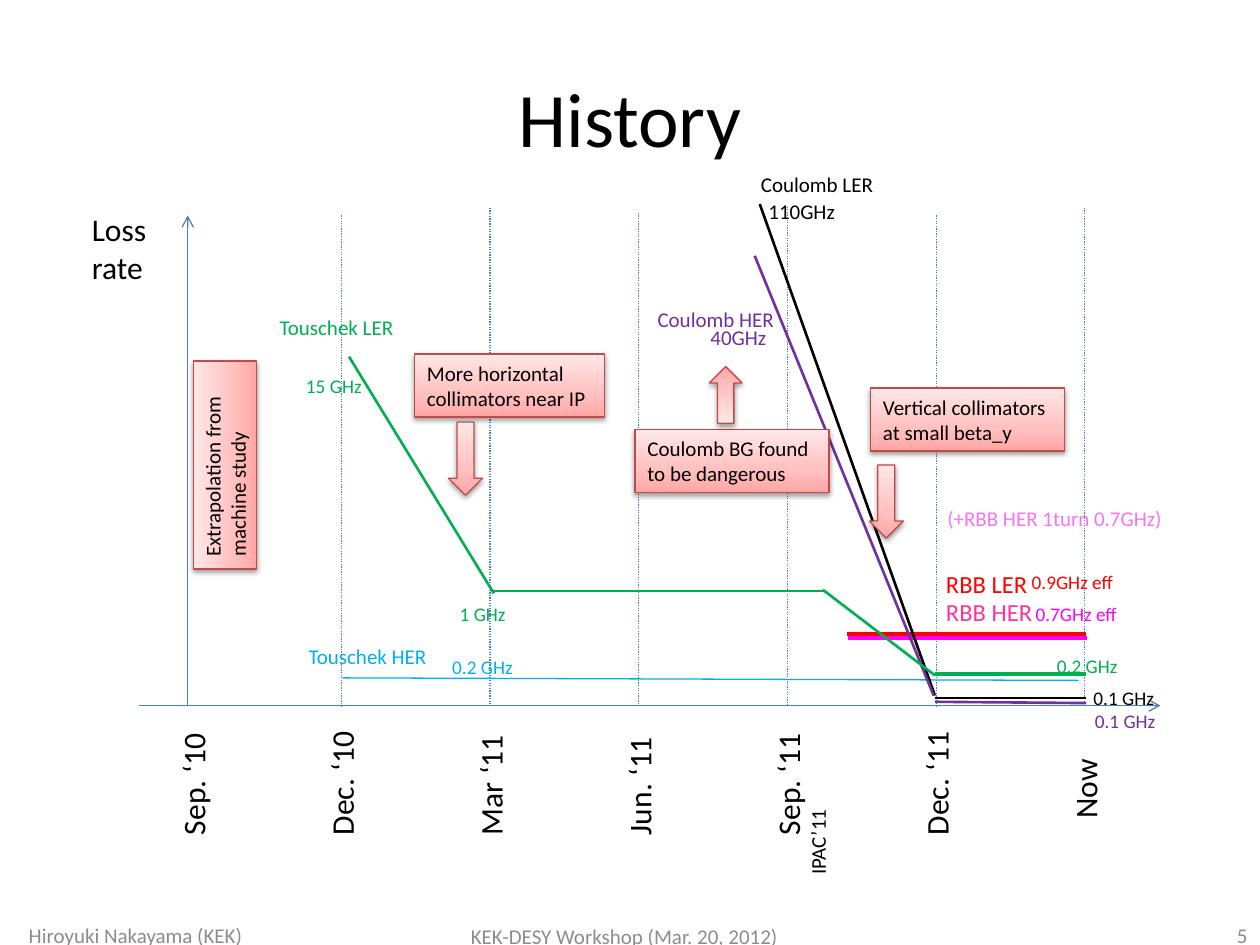
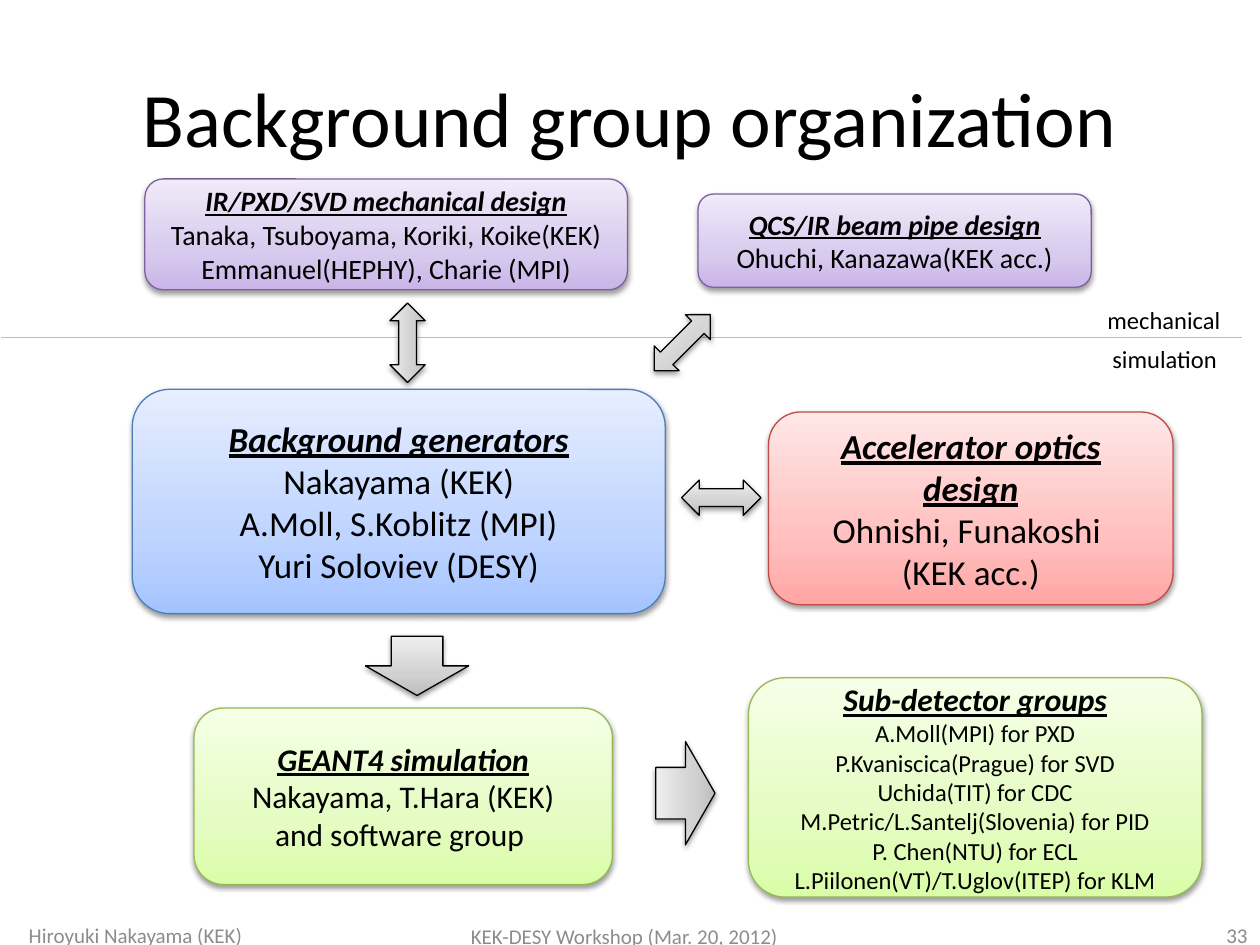
from lxml import etree
from pptx import Presentation
from pptx.dml.color import RGBColor
from pptx.enum.dml import MSO_LINE
from pptx.enum.shapes import MSO_CONNECTOR, MSO_SHAPE
from pptx.enum.text import MSO_ANCHOR, PP_ALIGN
from pptx.oxml import parse_xml
from pptx.oxml.ns import nsdecls, qn
from pptx.util import Inches, Pt

COLUMNS, ROWS = 10, 7.5
CELL = Inches(1)
FONT = "Calibri"
LEFT, CENTER, RIGHT = PP_ALIGN.LEFT, PP_ALIGN.CENTER, PP_ALIGN.RIGHT
TOP, MIDDLE = MSO_ANCHOR.TOP, MSO_ANCHOR.MIDDLE
STRAIGHT = MSO_CONNECTOR.STRAIGHT
DOTTED = MSO_LINE.ROUND_DOT
RECTANGLE, ROUNDED = MSO_SHAPE.RECTANGLE, MSO_SHAPE.ROUNDED_RECTANGLE
DOWN, BOTH_WAYS = MSO_SHAPE.DOWN_ARROW, MSO_SHAPE.LEFT_RIGHT_ARROW

BLACK = RGBColor(0x00, 0x00, 0x00)
GRAY = RGBColor(0x8C, 0x8C, 0x8C)
BLUE = RGBColor(0x4B, 0x7E, 0xBC)
GREEN = RGBColor(0x00, 0xB0, 0x50)
SKY = RGBColor(0x00, 0xB0, 0xF0)
MAGENTA = RGBColor(0xFF, 0x00, 0xFF)
RED = RGBColor(0xFF, 0x00, 0x00)
PINK = RGBColor(0xFF, 0x33, 0x99)
ORCHID = RGBColor(0xF7, 0x75, 0xEE)
PURPLE = RGBColor(0x70, 0x30, 0xA0)
GOLD = RGBColor(0xFF, 0xC0, 0x00)
BRICK = RGBColor(0xBF, 0x4C, 0x48)
VIOLET = RGBColor(0x7D, 0x60, 0xA0)
OLIVE = RGBColor(0x98, 0xB9, 0x55)


def shades(*codes):
    return [RGBColor.from_string(code) for code in codes]


ROSE_STYLE = (shades("FFA6A5", "FFC0BF", "FFE7E7"), BRICK)
LILAC_STYLE = (shades("C9B5E8", "D8CBEE", "F0EAF9"), VIOLET)
LIME_STYLE = (shades("DAFDA7", "E4FCC2", "F5FFE7"), OLIVE)
BLUE_STYLE = (shades("A4C4FF", "BFD4FF", "E6EEFF"), BLUE)
SILVER_STYLE = (shades("BDBDBD", "D1D1D1", "EEEEEE"), BLACK)


def cells(*counts):
    return [int(count * CELL) for count in counts]


def add_span(para, text, size, color=BLACK, heading=False):
    span = para.add_run()
    span.text = text
    font = span.font
    font.name, font.size, font.color.rgb = FONT, Pt(size), color
    font.bold = font.italic = font.underline = heading


def add_label(page, place, text, size, color=BLACK, align=LEFT, anchor=TOP, turn=0):
    box = page.shapes.add_textbox(*cells(*place))
    box.rotation = turn
    frame = box.text_frame
    frame.word_wrap = True
    frame.vertical_anchor = anchor
    para = frame.paragraphs[0]
    para.alignment = align
    for number, line in enumerate(text.split("\n")):
        if number:
            para.add_line_break()
        add_span(para, line, size, color)


def add_line(page, start, end, color, width=0.75, dash=None, arrow=False):
    line = page.shapes.add_connector(STRAIGHT, *cells(*start, *end))
    line.line.color.rgb = color
    line.line.width = Pt(width)
    if dash:
        line.line.dash_style = dash
    properties = line._element.spPr
    if arrow:
        etree.SubElement(properties.find(qn("a:ln")), qn("a:tailEnd"), type="arrow")
    etree.SubElement(properties, qn("a:effectLst"))


def add_glossy(page, kind, place, style, turn=0, upside_down=False):
    colors, edge = style
    shape = page.shapes.add_shape(kind, *cells(*place))
    shape.rotation = turn
    shape.line.color.rgb = edge
    shape.line.width = Pt(0.75)
    properties = shape._element.spPr
    if upside_down:
        properties.find(qn("a:xfrm")).set("flipV", "1")
    stops = "".join(
        f'<a:gs pos="{share * 1000}"><a:srgbClr val="{color}"/></a:gs>'
        for share, color in zip((0, 35, 100), colors)
    )
    gradient = parse_xml(
        f'<a:gradFill {nsdecls("a")} rotWithShape="1"><a:gsLst>{stops}</a:gsLst>'
        '<a:lin ang="16200000" scaled="0"/></a:gradFill>'
    )
    properties.find(qn("a:ln")).addprevious(gradient)
    properties.append(parse_xml(
        f'<a:effectLst {nsdecls("a")}><a:outerShdw blurRad="{Pt(3.1)}" dist="{Pt(1.6)}" '
        'dir="5400000" rotWithShape="0"><a:srgbClr val="000000"><a:alpha val="38000"/>'
        '</a:srgbClr></a:outerShdw></a:effectLst>'
    ))
    return shape


def add_callout(page, place, text, turn=0):
    frame = add_glossy(page, RECTANGLE, place, ROSE_STYLE, turn).text_frame
    frame.word_wrap = True
    frame.vertical_anchor = TOP
    para = frame.paragraphs[0]
    para.alignment = LEFT
    add_span(para, text, 12)


def add_group(page, place, style, heading, members, size, member_size=None, hanging=0):
    frame = add_glossy(page, ROUNDED, place, style).text_frame
    frame.word_wrap = True
    frame.vertical_anchor = MIDDLE
    para = frame.paragraphs[0]
    para.alignment = CENTER
    add_span(para, heading, size, heading=True)
    for member in members:
        para = frame.add_paragraph()
        para.alignment = CENTER
        if hanging:
            indent = Inches(hanging)
            settings = para._p.get_or_add_pPr()
            settings.set("marL", str(indent))
            settings.set("indent", str(-indent))
        add_span(para, member, member_size or size)


def add_page(deck, title, number):
    page = deck.slides.add_slide(deck.slide_layouts[6])
    add_label(page, (0.5, 0.3, 9, 1.25), title, 44, BLACK, CENTER, MIDDLE)
    for place, text, align in (
        ((0.13, 7.34, 2.14, 0.16), "Hiroyuki Nakayama (KEK)", LEFT),
        ((2.77, 7.36, 4.37, 0.14), "KEK-DESY Workshop (Mar. 20, 2012)", CENTER),
        ((7.67, 7.34, 2.33, 0.16), str(number), RIGHT),
    ):
        add_label(page, place, text, 12, GRAY, align, MIDDLE)
    return page


def add_timeline(page):
    baseline, first, step = 5.6, 1.53, 1.18
    add_line(page, (1.1, baseline), (9.21, baseline), BLUE, arrow=True)
    add_line(page, (1.49, baseline), (1.49, 1.71), BLUE, arrow=True)
    add_label(page, (0.63, 1.62, 0.68, 0.71), "Loss\nrate", 18)
    dates = ("Sep. ‘10", "Dec. ‘10", "Mar ‘11", "Jun. ‘11", "Sep. ‘11", "Dec. ‘11", "Now")
    guide_tops = (None, 1.71, 1.65, 1.69, 1.64, 1.71, 1.65)
    for index, (date, top) in enumerate(zip(dates, guide_tops)):
        column = first + index * step
        if top:
            add_line(page, (column, top), (column, baseline), BLUE, dash=DOTTED)
        width, middle = (0.89, 6.15) if date == "Now" else (1.21, 6.12)
        add_label(page, (column - width / 2, middle - 0.2, width, 0.4), date, 18, turn=270)
    add_label(page, (6.06, 6.46, 0.86, 0.3), "IPAC’11", 12, turn=270)


def add_loss_rates(page):
    for start, end, color, width in (
        ((2.77, 2.83), (3.92, 4.71), GREEN, 1.5),
        ((3.9, 4.69), (6.54, 4.69), GREEN, 1.5),
        ((7.42, 5.35), (8.62, 5.35), GREEN, 2.25),
        ((2.72, 5.38), (8.56, 5.4), SKY, 0.75),
        ((6.73, 5.06), (8.63, 5.06), MAGENTA, 2.25),
        ((6.72, 5.03), (8.62, 5.03), RED, 2.25),
        ((6.03, 1.62), (7.42, 5.52), BLACK, 1.5),
        ((7.42, 5.54), (8.62, 5.54), BLACK, 1.5),
        ((5.99, 2.03), (7.41, 5.52), PURPLE, 1.5),
        ((7.42, 5.57), (8.62, 5.58), PURPLE, 1.5),
        ((6.53, 4.68), (7.42, 5.36), GREEN, 1.5),
    ):
        add_line(page, start, end, color, width)
    for column, row, width, text, size, color in (
        (2.12, 2.45, 1.15, "Touschek LER", 12, GREEN),
        (2.33, 2.92, 0.69, "15 GHz", 11, GREEN),
        (3.55, 4.73, 0.69, "1 GHz", 11, GREEN),
        (8.29, 5.14, 0.69, "0.2 GHz", 11, GREEN),
        (2.35, 5.06, 1.15, "Touschek HER", 12, SKY),
        (3.49, 5.15, 0.69, "0.2 GHz", 11, SKY),
        (5.94, 1.31, 1.15, "Coulomb LER", 12, BLACK),
        (6, 1.53, 1.15, "110GHz", 12, BLACK),
        (8.58, 5.4, 0.69, "0.1 GHz", 11, BLACK),
        (5.12, 2.38, 1.15, "Coulomb HER", 12, PURPLE),
        (5.54, 2.53, 1.15, "40GHz", 12, PURPLE),
        (8.59, 5.58, 0.69, "0.1 GHz", 11, PURPLE),
        (7.41, 4.47, 1.77, "RBB LER", 14, RED),
        (8.09, 4.48, 0.9, "0.9GHz eff", 11, RED),
        (7.41, 4.69, 0.93, "RBB HER", 14, PINK),
        (8.12, 4.73, 1.65, "0.7GHz eff", 11, MAGENTA),
        (7.42, 3.96, 1.96, "(+RBB HER 1turn 0.7GHz)", 12, ORCHID),
    ):
        add_label(page, (column, row, width, 0.02 * size + 0.06), text, size, color)


def add_history(deck):
    page = add_page(deck, "History", 5)
    add_timeline(page)
    add_loss_rates(page)
    add_callout(page, (3.29, 2.81, 1.51, 0.5), "More horizontal collimators near IP")
    add_callout(page, (6.91, 3.08, 1.54, 0.5), "Vertical collimators at small beta_y")
    add_callout(page, (5.04, 3.41, 1.54, 0.5), "Coulomb BG found to be dangerous")
    add_callout(page, (0.96, 3.44, 1.65, 0.5), "Extrapolation from machine study", 270)
    add_glossy(page, DOWN, (3.56, 3.35, 0.27, 0.58), ROSE_STYLE)
    add_glossy(page, DOWN, (6.9, 3.69, 0.27, 0.58), ROSE_STYLE)
    add_glossy(page, DOWN, (5.63, 2.91, 0.26, 0.45), ROSE_STYLE, upside_down=True)


def add_organization(deck):
    page = add_page(deck, "Background group organization", 33)
    add_line(page, (9.86, 2.68), (0.01, 2.68), GOLD)
    add_label(page, (8.69, 2.37, 1.31, 0.34), "mechanical", 14)
    add_label(page, (8.73, 2.68, 1.56, 0.34), "simulation", 14)
    add_group(page, (6.1, 3.27, 3.21, 1.53), ROSE_STYLE, "Accelerator optics design",
              ("Ohnishi, Funakoshi ", "(KEK acc.)"), 20)
    add_group(page, (1.15, 1.42, 3.83, 0.88), LILAC_STYLE, "IR/PXD/SVD mechanical design",
              ("Tanaka, Tsuboyama, Koriki, Koike(KEK)", "Emmanuel(HEPHY), Charie (MPI)"), 16)
    add_group(page, (5.94, 5.38, 3.6, 1.74), LIME_STYLE, "Sub-detector groups",
              ("A.Moll(MPI) for PXD", "P.Kvaniscica(Prague) for SVD", "Uchida(TIT) for CDC",
               "M.Petric/L.Santelj(Slovenia) for PID", "P. Chen(NTU) for ECL",
               "L.Piilonen(VT)/T.Uglov(ITEP) for KLM"), 18, 14, 0.38)
    add_group(page, (5.54, 1.54, 3.12, 0.74), LILAC_STYLE, "QCS/IR beam pipe design",
              ("Ohuchi, Kanazawa(KEK acc.)",), 16)
    add_group(page, (1.05, 3.09, 4.23, 1.78), BLUE_STYLE, "Background generators",
              ("Nakayama (KEK)", "A.Moll, S.Koblitz (MPI)", "Yuri Soloviev (DESY)"), 20)
    add_group(page, (1.54, 5.62, 3.32, 1.4), LIME_STYLE, "GEANT4 simulation",
              ("Nakayama, T.Hara (KEK)", "and software group "), 18)
    for column, row, turn in ((5.41, 3.81, 0), (5.1, 2.58, 315), (2.92, 2.58, 270)):
        add_glossy(page, BOTH_WAYS, (column, row, 0.63, 0.28), SILVER_STYLE, turn)
    for column, row, turn in ((2.9, 5.05, 0), (5.03, 6.06, 270)):
        add_glossy(page, DOWN, (column, row, 0.82, 0.47), SILVER_STYLE, turn)


def main():
    deck = Presentation()
    deck.slide_width, deck.slide_height = cells(COLUMNS, ROWS)
    add_history(deck)
    add_organization(deck)
    deck.save("out.pptx")


if __name__ == "__main__":
    main()
